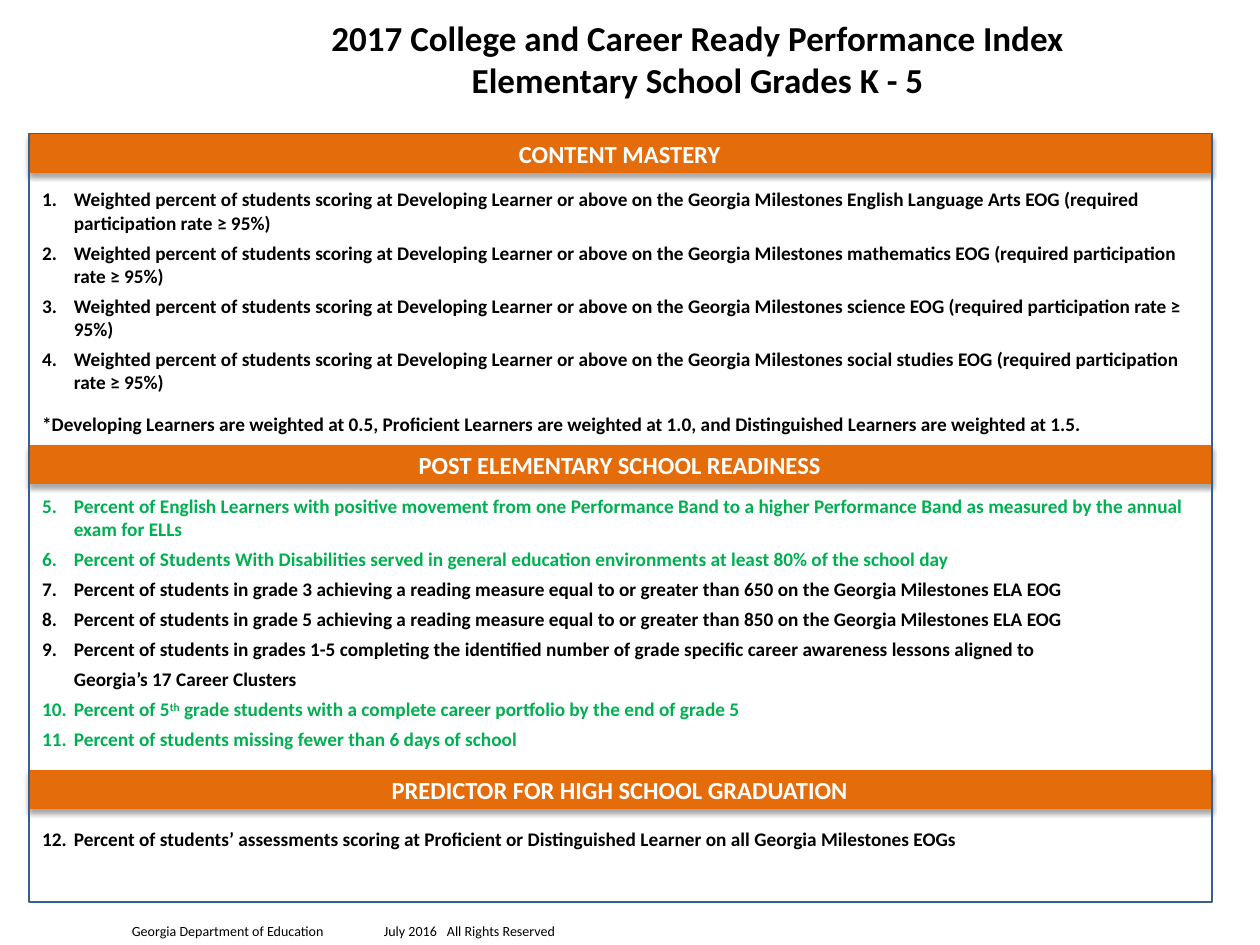
"""Builds the 2017 elementary school performance index slide."""
import pptx
import pptx.dml.color
import pptx.enum.shapes
import pptx.enum.text
import pptx.oxml.ns
import pptx.util
from lxml import etree

Cm, Pt = pptx.util.Cm, pptx.util.Pt
ALIGN, ANCHOR = pptx.enum.text.PP_ALIGN, pptx.enum.text.MSO_ANCHOR
RECTANGLE = pptx.enum.shapes.MSO_SHAPE.RECTANGLE
BLACK, WHITE, GREEN, ORANGE, BLUE = "000000", "FFFFFF", "00B050", "E46C0A", "3A5F8C"
INDENT = Cm(0.64)

TITLE = ["2017 College and Career Ready Performance Index", "Elementary School Grades K - 5"]
MASTERY = [
    f"Weighted percent of students scoring at Developing Learner or above on the Georgia Milestones {subject} EOG "
    "(required participation rate ≥ 95%)"
    for subject in ("English Language Arts", "mathematics", "science", "social studies")
]
WEIGHTS = ("*Developing Learners are weighted at 0.5, Proficient Learners are weighted at 1.0, "
           "and Distinguished Learners are weighted at 1.5.")
READING = [
    f"Percent of students in grade {grade} achieving a reading measure equal to or greater than {score} "
    "on the Georgia Milestones ELA EOG"
    for grade, score in ((3, 650), (5, 850))
]

# Each item: first number of its list (None if unnumbered), left indent, space before, colour, text parts.
SECTIONS = [
    ("CONTENT MASTERY", 2.72, 3.66, 5.28, [
        *((1, INDENT, 0, BLACK, [text]) for text in MASTERY),
        (None, 0, 6.5, BLACK, [WEIGHTS]),
    ]),
    ("POST ELEMENTARY SCHOOL READINESS", 8.99, 9.83, 5.49, [
        (5, INDENT, 0, GREEN, ["Percent of English Learners with positive movement from one Performance Band "
                               "to a higher Performance Band as measured by the annual exam for ELLs"]),
        (5, INDENT, 0, GREEN, ["Percent of Students With Disabilities served in general education environments "
                               "at least 80% of the school day"]),
        *((5, INDENT, 0, BLACK, [text]) for text in READING),
        (5, INDENT, 0, BLACK, ["Percent of students in grades 1-5 completing the identified number of "
                               "grade specific career awareness lessons aligned to"]),
        (None, INDENT, 0, BLACK, ["Georgia’s 17 Career Clusters"]),
        (10, INDENT, 0, GREEN, ["Percent of 5", "th",
                                " grade students with a complete career portfolio by the end of grade 5"]),
        (10, INDENT, 0, GREEN, ["Percent of students missing fewer than 6 days of school"]),
    ]),
    ("PREDICTOR FOR HIGH SCHOOL GRADUATION", 15.54, 16.56, 0.74, [
        (12, INDENT, 0, BLACK, ["Percent of students’ assessments scoring at Proficient or Distinguished Learner "
                                "on all Georgia Milestones EOGs"]),
    ]),
]
FOOTER = ["Georgia Department of Education", "July 2016", "All Rights Reserved"]
FOOTER_TABS = [("ctr", 11.89), ("r", 21.92)]


def rgb(color):
    """Turn a hex string into a colour."""
    return pptx.dml.color.RGBColor.from_string(color)


def add_child(parent, tag, **attributes):
    """Append a drawing element with the given attributes."""
    return etree.SubElement(parent, pptx.oxml.ns.qn(tag), {key: str(value) for key, value in attributes.items()})


def add_run(paragraph, text, size, color, bold=True):
    """Add one formatted run."""
    run = paragraph.add_run()
    run.text = text
    run.font.name, run.font.size, run.font.bold = "Calibri", Pt(size), bold
    run.font.color.rgb = rgb(color)
    return run


def add_rectangle(slide, left, top, width, height, line, weight):
    """Add an outlined rectangle without fill or shadow."""
    rectangle = slide.shapes.add_shape(RECTANGLE, Cm(left), Cm(top), Cm(width), Cm(height))
    rectangle.shadow.inherit = False
    rectangle.fill.background()
    rectangle.line.color.rgb = rgb(line)
    rectangle.line.width = Pt(weight)
    return rectangle


def add_heading(slide, heading, top):
    """Add an orange section bar with a soft shadow."""
    bar = add_rectangle(slide, 0.58, top, 23.83, 0.76, ORANGE, 0.75)
    bar.fill.solid()
    bar.fill.fore_color.rgb = rgb(ORANGE)
    effects = bar._element.spPr.find(pptx.oxml.ns.qn("a:effectLst"))
    shadow = add_child(effects, "a:outerShdw", blurRad=Pt(3.1), dist=Pt(1.8), dir=5400000, rotWithShape=0)
    add_child(add_child(shadow, "a:srgbClr", val=BLACK), "a:alpha", val=35000)
    bar.text_frame.vertical_anchor = ANCHOR.MIDDLE
    paragraph = bar.text_frame.paragraphs[0]
    paragraph.alignment = ALIGN.CENTER
    add_run(paragraph, heading, 14, WHITE)


def add_text_box(slide, left, top, width, height):
    """Add a wrapping text box and return its text frame."""
    frame = slide.shapes.add_textbox(Cm(left), Cm(top), Cm(width), Cm(height)).text_frame
    frame.word_wrap = True
    return frame


def add_indicators(slide, top, height, items):
    """Add the indicators of one section."""
    frame = add_text_box(slide, 0.6, top, 24, height)
    for index, (start, indent, before, color, parts) in enumerate(items):
        paragraph = frame.add_paragraph() if index else frame.paragraphs[0]
        properties = paragraph._p.get_or_add_pPr()
        properties.set("marL", str(indent))
        if start:
            properties.set("indent", str(-indent))
            add_child(properties, "a:buAutoNum", type="arabicPeriod", startAt=start)
        paragraph.space_after = Pt(4)
        if before:
            paragraph.space_before = Pt(before)
        for part in parts:
            run = add_run(paragraph, part, 11, color)
            if part == "th":
                run._r.get_or_add_rPr().set("baseline", "30000")


def add_title(slide):
    """Place and fill the title."""
    title = slide.shapes.title
    title.left, title.top, title.width, title.height = Cm(5.49), Cm(0.03), Cm(17.15), Cm(2.29)
    title.text_frame.vertical_anchor = ANCHOR.MIDDLE
    title.text_frame.auto_size = pptx.enum.text.MSO_AUTO_SIZE.NONE
    paragraph = title.text_frame.paragraphs[0]
    paragraph.alignment = ALIGN.CENTER
    for index, text in enumerate(TITLE):
        if index:
            paragraph.add_line_break()
        add_run(paragraph, text, 20, BLACK)


def add_footer(slide):
    """Add the footer line with its parts on tab stops."""
    frame = add_text_box(slide, 0.43, 18.47, 24.41, 0.58)
    frame.vertical_anchor = ANCHOR.MIDDLE
    paragraph = frame.paragraphs[0]
    properties = paragraph._p.get_or_add_pPr()
    properties.set("marL", str(Cm(1.98)))
    properties.set("indent", "0")
    tabs = add_child(properties, "a:tabLst")
    for alignment, position in FOOTER_TABS:
        add_child(tabs, "a:tab", pos=Cm(position), algn=alignment)
    for index, text in enumerate(FOOTER):
        add_run(paragraph, "\t" + text if index else text, 8, BLACK, False)


def main():
    """Build and save the slide."""
    deck = pptx.Presentation()
    deck.slide_width, deck.slide_height = Cm(25.4), Cm(19.05)
    slide = deck.slides.add_slide(deck.slide_layouts[5])
    add_title(slide)
    for heading, bar_top, list_top, list_height, items in SECTIONS:
        add_heading(slide, heading, bar_top)
        add_indicators(slide, list_top, list_height, items)
    add_rectangle(slide, 0.58, 2.69, 23.85, 15.49, BLUE, 1)
    add_footer(slide)
    deck.save("out.pptx")


if __name__ == "__main__":
    main()
